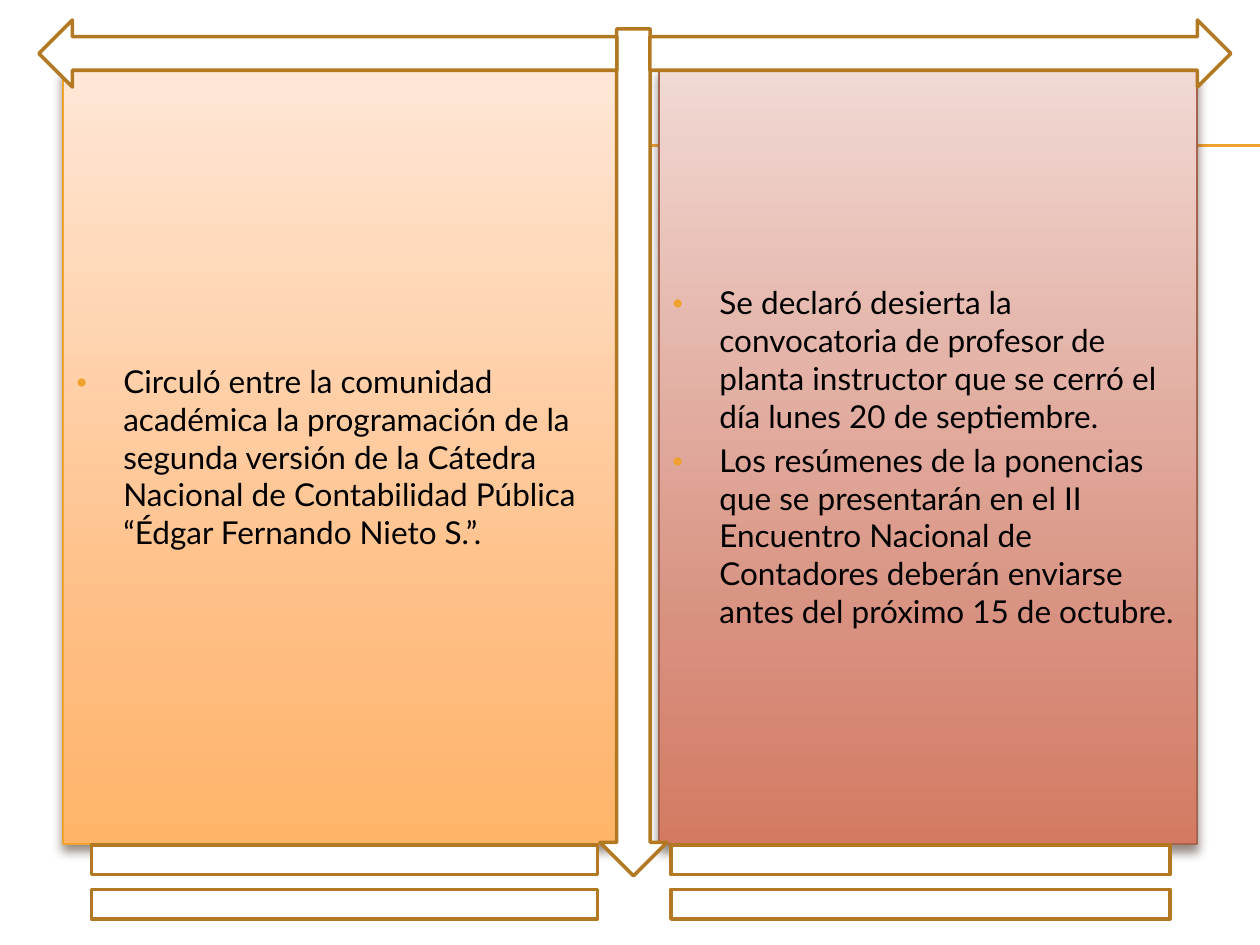
from copy import deepcopy
from dataclasses import dataclass

from pptx import Presentation, util as u
from pptx.dml.color import RGBColor
from pptx.enum import shapes, text
from pptx.oxml import parse_xml
from pptx.oxml.ns import nsdecls, qn

SCALE = 914400 / 126


@dataclass(frozen=True)
class Theme:
    """Colours, font and sizes of the slide."""
    font: str = "Lato"
    body_pt: int = 18
    ink: str = "000000"
    paper: str = "FFFFFF"
    accent: str = "F0A22E"
    frame: str = "B27822"
    shade: str = "4E3B30"
    orange: tuple = ((0, "FFE7D7"), (0.72, "FFBE84"), (1, "FFB468"))
    red: tuple = ((0, "F1D9D4"), (0.72, "D89180"), (1, "D47A62"))
    red_edge: str = "A5644E"
    hairline_pt: float = 0.75
    panel_line_pt: float = 0.79
    frame_line_pt: int = 2


THEME = Theme()


def px(length):
    """Turn pixels into EMU."""
    return u.Emu(round(length * SCALE))


def set_line(line, colour, width):
    """Give an outline its colour and width."""
    line.color.rgb = RGBColor.from_string(colour)
    line.width = u.Pt(width)


def add_rule(slide, y):
    """Draw a thin horizontal rule out to the right edge."""
    rule = slide.shapes.add_connector(
        shapes.MSO_CONNECTOR.STRAIGHT, px(71), px(y), px(1260), px(y))
    set_line(rule.line, THEME.accent, THEME.hairline_pt)
    rule._element.spPr.append(parse_xml(f"<a:effectLst {nsdecls('a')}/>"))


def add_frame(slide, kind, box):
    """Draw one white, brown-edged piece of the frame."""
    piece = slide.shapes.add_shape(kind, *map(px, box))
    piece.shadow.inherit = False
    piece.fill.solid()
    piece.fill.fore_color.rgb = RGBColor.from_string(THEME.paper)
    set_line(piece.line, THEME.frame, THEME.frame_line_pt)


def set_gradient(panel, stops):
    """Fill a panel from top to bottom through three colours."""
    panel.fill.gradient()
    panel.fill.gradient_angle = 270
    stop_list = panel._element.spPr.find(qn("a:gradFill")).find(qn("a:gsLst"))
    stop_list.append(deepcopy(stop_list[-1]))
    for stop, (position, colour) in zip(panel.fill.gradient_stops, stops):
        stop.position = position
        stop.color.rgb = RGBColor.from_string(colour)


def add_shadow(panel):
    """Cast a soft shadow below a panel."""
    panel.shadow.inherit = False
    panel._element.spPr.find(qn("a:effectLst")).append(parse_xml(
        f'<a:outerShdw {nsdecls("a")} blurRad="{u.Pt(6)}" dist="{u.Pt(4)}" '
        f'dir="5400000" rotWithShape="0"><a:srgbClr val="{THEME.shade}">'
        '<a:alpha val="60000"/></a:srgbClr></a:outerShdw>'))


def set_bullet(paragraph):
    """Hang a small accent bullet before a paragraph."""
    properties = paragraph._p.get_or_add_pPr()
    properties.set("marL", str(px(48)))
    properties.set("indent", str(-px(48)))
    for body in (f'buClr {nsdecls("a")}><a:srgbClr val="{THEME.accent}"/></a:buClr',
                 f'buSzPct {nsdecls("a")} val="70000"/',
                 f'buFont {nsdecls("a")} typeface="{THEME.font}"/',
                 f'buChar {nsdecls("a")} char="•"/'):
        properties.append(parse_xml(f"<a:{body}>"))


def add_panel(slide, box, stops, edge, items):
    """Draw a gradient panel holding a bulleted list."""
    panel = slide.shapes.add_shape(
        shapes.MSO_SHAPE.RECTANGLE, *map(px, box))
    set_gradient(panel, stops)
    set_line(panel.line, edge, THEME.panel_line_pt)
    add_shadow(panel)
    frame = panel.text_frame
    frame.word_wrap = True
    frame.vertical_anchor = text.MSO_ANCHOR.MIDDLE
    frame.text = "\n".join(items)
    for paragraph in frame.paragraphs:
        paragraph.alignment = text.PP_ALIGN.LEFT
        paragraph.space_before = u.Pt(THEME.body_pt * 0.2)
        set_bullet(paragraph)
        font = paragraph.runs[0].font
        font.name = THEME.font
        font.size = u.Pt(THEME.body_pt)
        font.color.rgb = RGBColor.from_string(THEME.ink)


def main():
    """Build the slide and save it."""
    deck = Presentation()
    deck.slide_width, deck.slide_height = px(1260), px(945)
    slide = deck.slides.add_slide(deck.slide_layouts[6])

    for y in (145, 146):
        add_rule(slide, y)

    add_panel(slide, (63, 69, 557, 775), THEME.orange, THEME.accent, [
        "Circuló entre la comunidad académica la programación de la segunda "
        "versión de la Cátedra Nacional de Contabilidad Pública “Édgar "
        "Fernando Nieto S.”."])
    add_panel(slide, (659, 69, 538, 775), THEME.red, THEME.red_edge, [
        "Se declaró desierta la convocatoria de profesor de planta instructor "
        "que se cerró el día lunes 20 de septiembre.",
        "Los resúmenes de la ponencias que se presentarán en el II Encuentro "
        "Nacional de Contadores deberán enviarse antes del próximo 15 de "
        "octubre."])

    kinds = shapes.MSO_SHAPE
    for kind, box in (
            (kinds.DOWN_ARROW, (600, 29, 67, 847)),
            (kinds.RIGHT_ARROW, (650, 20, 581, 67)),
            (kinds.LEFT_ARROW, (39, 20, 578, 67)),
            (kinds.MATH_EQUAL, (0, 819, 689, 126)),
            (kinds.MATH_EQUAL, (581, 819, 679, 126))):
        add_frame(slide, kind, box)

    deck.save("out.pptx")


if __name__ == "__main__":
    main()
